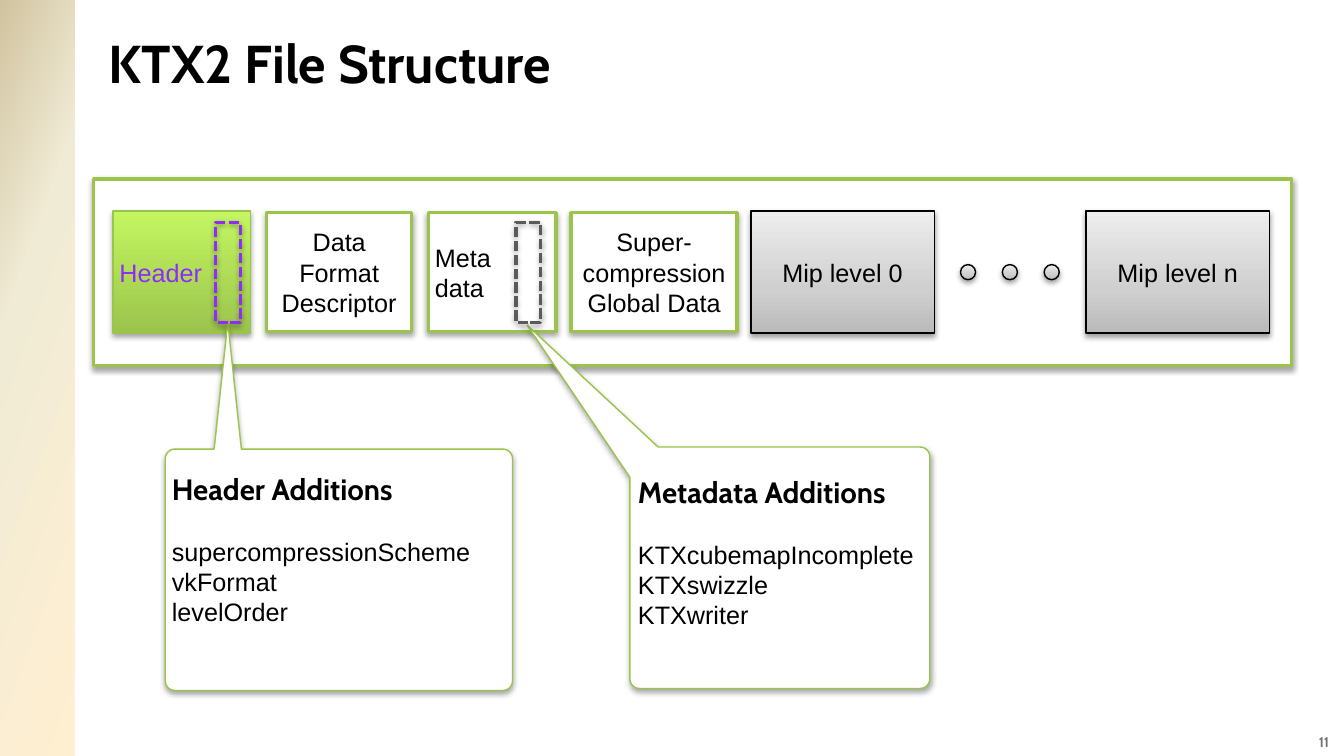
"""Builds a slide that explains the structure of a KTX2 file."""
from math import cos, radians, sin

from lxml import etree
from pptx import Presentation
from pptx.dml.color import RGBColor
from pptx.enum.dml import MSO_LINE
from pptx.enum.shapes import MSO_SHAPE
from pptx.enum.text import MSO_ANCHOR, MSO_AUTO_SIZE, PP_ALIGN
from pptx.oxml.ns import qn
from pptx.util import Inches, Pt

RECTANGLE, OVAL = MSO_SHAPE.RECTANGLE, MSO_SHAPE.OVAL
TOP, MIDDLE = MSO_ANCHOR.TOP, MSO_ANCHOR.MIDDLE
LEFT, CENTER = PP_ALIGN.LEFT, PP_ALIGN.CENTER
DASH = MSO_LINE.SQUARE_DOT
NO_AUTOFIT = MSO_AUTO_SIZE.NONE
TITLE_ONLY = 5
COLUMNS, ROWS, CELL = 26.67, 15, Inches(1)

COLORS = {
    "white": "FFFFFF", "black": "000000", "green": "9BC44D", "lime": "C3F661",
    "purple": "902AFF", "charcoal": "5A5A5A", "number": "727272",
}
GRADIENTS = {
    "sand": ([(0, "FFEFD1"), (65, "F0EBD5"), (100, "D1C39F")], 200),
    "silver": ([(0, "BABABA"), (35, "CFCFCF"), (100, "EDEDED")], 270),
    "leaf": ([(0, COLORS["green"]), (100, COLORS["lime"])], 270),
}
FORMATS = {
    "title": {"name": "Cabin", "size": Pt(76), "bold": True},
    "heading": {"name": "Cabin", "size": Pt(42), "bold": True},
    "body": {"name": "Arial", "size": Pt(36), "bold": False},
    "number": {"name": "Cabin", "size": Pt(20), "bold": True},
}


class SlideBuilder:
    """Draws styled elements on one slide, placed in grid columns and rows."""

    def __init__(self, presentation):
        self.slide = presentation.slides.add_slide(presentation.slide_layouts[TITLE_ONLY])
        self.shapes = self.slide.shapes

    def grid(self, *cells):
        return [round(cell * CELL) for cell in cells]

    def paint(self, fill, color):
        if color is None:
            fill.background()
        elif color in GRADIENTS:
            fill.gradient()
            fill.gradient_angle = 360 - GRADIENTS[color][1]
        else:
            fill.solid()
            fill.fore_color.rgb = RGBColor.from_string(COLORS[color])

    def set_stops(self, shape, color):
        stop_list = next(shape._element.spPr.iter(qn("a:gsLst")))
        for stop in list(stop_list):
            stop_list.remove(stop)
        for position, value in GRADIENTS[color][0]:
            stop = etree.SubElement(stop_list, qn("a:gs"), pos=str(position * 1000))
            etree.SubElement(stop, qn("a:srgbClr"), val=value)

    def add_shadow(self, shape, opacity):
        effects = shape._element.spPr.find(qn("a:effectLst"))
        shadow = etree.SubElement(
            effects, qn("a:outerShdw"), blurRad=str(Pt(8)), dist=str(Pt(4)),
            dir="5400000", rotWithShape="0")
        color = etree.SubElement(shadow, qn("a:srgbClr"), val=COLORS["black"])
        etree.SubElement(color, qn("a:alpha"), val=str(opacity * 1000))

    def style(self, shape, fill, line=None, width=2, dash=None, opacity=35):
        shape.shadow.inherit = False
        self.paint(shape.fill, fill)
        if fill in GRADIENTS:
            self.set_stops(shape, fill)
        self.paint(shape.line.fill, line)
        if line:
            shape.line.width = Pt(width)
            shape.line.dash_style = dash
            self.add_shadow(shape, opacity)

    def set_text(self, shape, lines, color="black", align=LEFT, anchor=MIDDLE,
                 margins=(0.13, 0.13, 0.13, 0.13), wrap=True):
        frame = shape.text_frame
        left, top, right, bottom = self.grid(*margins)
        values = {
            "margin_left": left, "margin_top": top, "margin_right": right,
            "margin_bottom": bottom, "word_wrap": wrap, "vertical_anchor": anchor,
            "auto_size": NO_AUTOFIT,
        }
        for name, value in values.items():
            setattr(frame, name, value)
        for index, (text, kind, space) in enumerate(lines):
            paragraph = frame.add_paragraph() if index else frame.paragraphs[0]
            paragraph.alignment = align
            paragraph.space_before = Pt(space)
            run = paragraph.add_run()
            run.text = text
            for name, value in FORMATS[kind].items():
                setattr(run.font, name, value)
            run.font.color.rgb = RGBColor.from_string(COLORS[color])

    def add_title(self, text, *place):
        title = self.shapes.title
        title.left, title.top, title.width, title.height = self.grid(*place)
        self.set_text(title, [(text, "title", 0)], margins=(0.12,) * 4)

    def add_number(self, text, *place):
        box = self.shapes.add_textbox(*self.grid(*place))
        self.set_text(box, [(text, "number", 0)], "number", anchor=TOP,
                      margins=(0.05,) * 4, wrap=False)

    def add_shape(self, kind, place, *style, **options):
        shape = self.shapes.add_shape(kind, *self.grid(*place))
        self.style(shape, *style, **options)
        return shape

    def add_block(self, texts, place, *style, color="black", align=CENTER, **options):
        block = self.add_shape(RECTANGLE, place, *style, **options)
        self.set_text(block, [(text, "body", 0) for text in texts], color, align)

    def add_callout(self, place, tip, tail_start, tail_end, heading, items, indent):
        left, top, width, height = place
        radius = 0.19
        west, east = left + radius, left + width - radius
        north, south = top + radius, top + height - radius
        corners = [(east, north), (east, south), (west, south), (west, north)]
        if tail_start[1] > top:
            corners.pop()
        outline = [tail_end]
        for index, (column, row) in enumerate(corners):
            for step in range(0, 91, 15):
                angle = radians(90 * index - 90 + step)
                outline.append((column + radius * cos(angle), row + radius * sin(angle)))
        outline.append(tail_start)
        builder = self.shapes.build_freeform(*self.grid(*tip))
        builder.add_line_segments([self.grid(*point) for point in outline], close=True)
        callout = builder.convert_to_shape()
        self.style(callout, "white", "green")
        lines = [(heading, "heading", 0)]
        lines += [(item, "body", 0 if index else 42) for index, item in enumerate(items)]
        self.set_text(callout, lines, anchor=TOP, margins=(indent, 2.96, 0.13, 0.13))


def main():
    """Builds the slide and saves the presentation."""
    presentation = Presentation()
    presentation.slide_width = round(COLUMNS * CELL)
    presentation.slide_height = ROWS * CELL
    builder = SlideBuilder(presentation)

    builder.add_shape(RECTANGLE, (0, 0, 1.48, ROWS), "sand")
    builder.add_number("11", 26.12, 14.51, 0.45, 0.43)
    builder.add_title("KTX2 File Structure", 2.04, 0.46, 24.26, 1.54)

    builder.add_shape(RECTANGLE, (1.86, 3.55, 23.77, 3.7), "white", "green", 5)
    for text, column in (("Mip level 0", 14.9), ("Mip level n", 21.55)):
        builder.add_block([text], (column, 4.19, 3.64, 2.42), "silver", "black", opacity=38)
    builder.add_block(["Header"], (2.24, 4.19, 2.73, 2.42), "leaf", "green",
                      color="purple", align=LEFT)
    for texts, column, width, align in (
        (["Data Format Descriptor"], 5.29, 2.88, CENTER),
        (["Meta", "data"], 8.5, 2.53, LEFT),
        (["Super-compression Global Data"], 11.33, 3.3, CENTER),
    ):
        builder.add_block(texts, (column, 4.22, width, 2.36), "white", "green", 5, align=align)
    for index in range(3):
        builder.add_shape(OVAL, (19.06 + 0.83 * index, 5.25, 0.3, 0.3),
                          "silver", "black", opacity=38)

    builder.add_callout((3.28, 8.91, 6.89, 4.79), (4.52, 6.39), (4.25, 8.91), (4.79, 8.91),
                        "Header Additions",
                        ["supercompressionScheme", "vkFormat", "levelOrder"], 0.13)
    builder.add_callout((12.5, 8.87, 5.95, 4.79), (10.46, 6.45), (12.5, 9.47), (13.06, 8.87),
                        "Metadata Additions",
                        ["KTXcubemapIncomplete", "KTXswizzle", "KTXwriter"], 2.2)
    for column, color in ((4.28, "purple"), (10.24, "charcoal")):
        builder.add_shape(RECTANGLE, (column, 4.41, 0.49, 1.99), None, color, 5, DASH)

    presentation.save("out.pptx")


if __name__ == "__main__":
    main()
